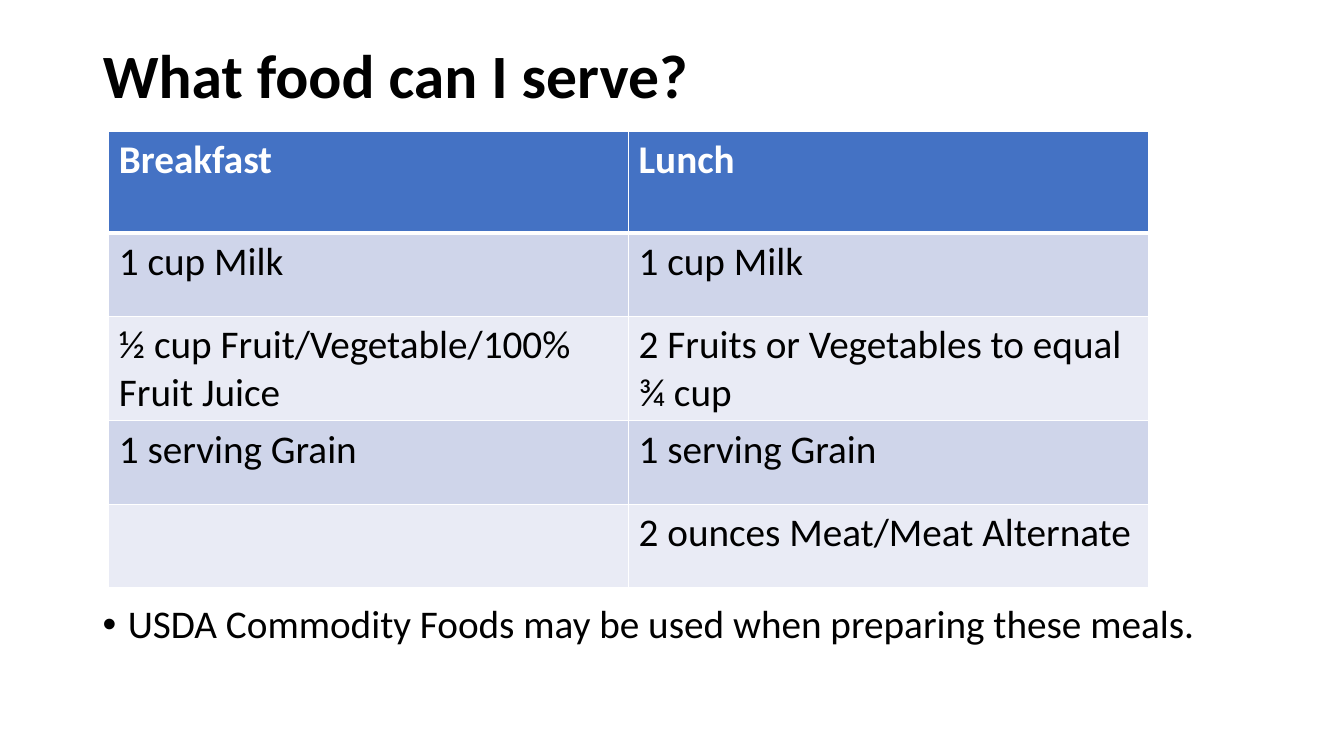
"""Build the slide on foods served at breakfast and lunch."""
from dataclasses import dataclass

from lxml import etree
from pptx import Presentation
from pptx.dml.color import RGBColor
from pptx.enum import text
from pptx.oxml import ns
from pptx.util import Inches, Pt

FONT = "Calibri"
COLORS = {
    "black": "000000",
    "white": "FFFFFF",
    "header": "4472C4",
    "band_dark": "CFD5EA",
    "band_light": "E9EBF5",
}


@dataclass
class MealRow:
    breakfast: str
    lunch: str
    fill: str
    height: float = 0.83
    color: str = "black"
    bold: bool = False
    top_line: float = 1
    bottom_line: float = 1


MEALS = [
    MealRow("Breakfast", "Lunch", "header", 1.01, "white", True, bottom_line=3),
    MealRow("1 cup Milk", "1 cup Milk", "band_dark", top_line=3),
    MealRow("½ cup Fruit/Vegetable/100% Fruit Juice",
            "2 Fruits or Vegetables to equal ¾ cup", "band_light"),
    MealRow("1 serving Grain", "1 serving Grain", "band_dark"),
    MealRow("", "2 ounces Meat/Meat Alternate", "band_light"),
]


def style(p, size: float, color: str = "black", bold: bool = False) -> None:
    """Set the font of a paragraph."""
    p.font.name = FONT
    p.font.size = Pt(size)
    p.font.bold = bold
    p.font.color.rgb = RGBColor.from_string(COLORS[color])


def add_border(cell, side: str, width: float) -> None:
    """Draw a white line on one side of a cell."""
    tc_pr = cell._tc.get_or_add_tcPr()
    ln = etree.SubElement(tc_pr, ns.qn(f"a:ln{side}"), w=str(Pt(width)))
    fill = etree.SubElement(ln, ns.qn("a:solidFill"))
    etree.SubElement(fill, ns.qn("a:srgbClr"), val=COLORS["white"])


def add_title(slide, title: str) -> None:
    """Place and format the slide title."""
    sp = slide.shapes.title
    sp.left, sp.top = Inches(0.92), Inches(0.4)
    sp.width, sp.height = Inches(11.5), Inches(1.45)
    tf = sp.text_frame
    tf.text = title
    tf.auto_size = text.MSO_AUTO_SIZE.NONE
    tf.vertical_anchor = text.MSO_ANCHOR.TOP
    p = tf.paragraphs[0]
    p.alignment = text.PP_ALIGN.LEFT
    p.line_spacing = 0.9
    style(p, 44, bold=True)


def add_meals(slide, rows: list[MealRow]) -> None:
    """Add the table of meals."""
    height = sum(row.height for row in rows)
    table = slide.shapes.add_table(
        len(rows), 2, Inches(1.08), Inches(1.3), Inches(10.31), Inches(height)
    ).table
    for i, row in enumerate(rows):
        table.rows[i].height = Inches(row.height)
        for j, food in enumerate((row.breakfast, row.lunch)):
            cell = table.cell(i, j)
            cell.text = food
            style(cell.text_frame.paragraphs[0], 28, row.color, row.bold)
            widths = {"L": 1, "R": 1, "T": row.top_line, "B": row.bottom_line}
            for side, width in widths.items():
                add_border(cell, side, width)
            cell.fill.solid()
            cell.fill.fore_color.rgb = RGBColor.from_string(COLORS[row.fill])


def add_note(slide, note: str) -> None:
    """Add the bulleted note under the table."""
    sp = slide.shapes.add_textbox(
        Inches(0.92), Inches(5.95), Inches(11.5), Inches(0.8))
    tf = sp.text_frame
    tf.word_wrap = True
    p = tf.paragraphs[0]
    p.text = note
    p_pr = p._p.get_or_add_pPr()
    p_pr.set("marL", str(Inches(0.25)))
    p_pr.set("indent", str(Inches(-0.25)))
    etree.SubElement(p_pr, ns.qn("a:buFont"), typeface="Arial")
    etree.SubElement(p_pr, ns.qn("a:buChar"), char="•")
    p.line_spacing = 0.9
    style(p, 28)


def main() -> None:
    """Create and save the presentation."""
    prs = Presentation()
    prs.slide_width, prs.slide_height = Inches(13.33), Inches(7.5)
    slide = prs.slides.add_slide(prs.slide_layouts[5])
    add_title(slide, "What food can I serve?")
    add_note(slide, "USDA Commodity Foods may be used when preparing these meals.")
    add_meals(slide, MEALS)
    prs.save("out.pptx")


if __name__ == "__main__":
    main()
